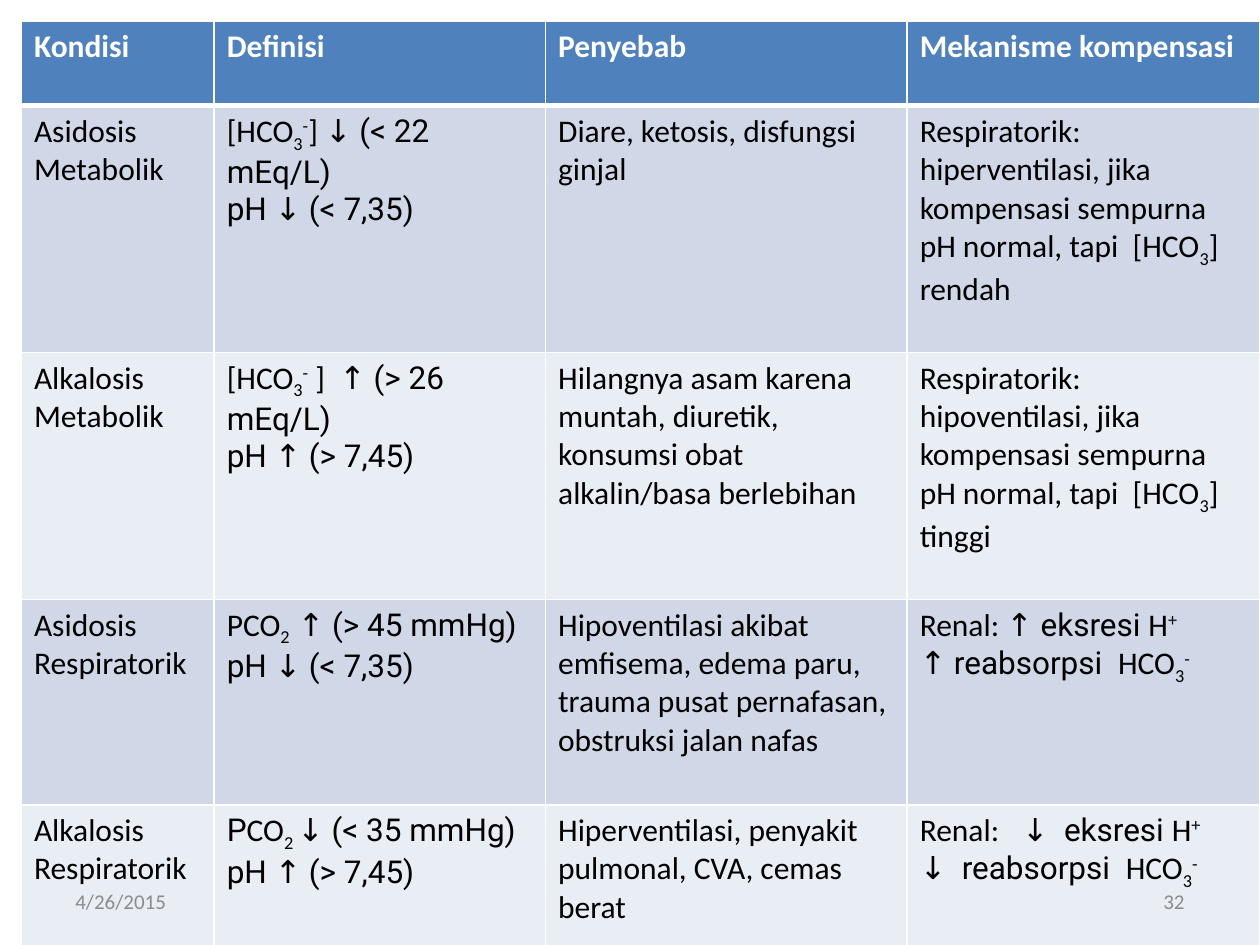
from lxml.etree import SubElement as Sub
from pptx import Presentation
from pptx.dml.color import RGBColor as RGB
from pptx.enum.text import MSO_ANCHOR as Anchor, PP_ALIGN as Align
from pptx.oxml.ns import qn
from pptx.util import Inches, Pt

# Content: a cell is a list of lines, a line a list of (style, text) runs
PLAIN, ALT, LOW, HIGH = "plain", "alt", "low", "high"
HCO3 = [(PLAIN, "HCO"), (LOW, "3"), (HIGH, "-")]


def say(text):
    return [[(PLAIN, text)]]


def lung(mode, end):
    lead = f"Respiratorik: {mode}, jika kompensasi sempurna pH normal, tapi  [HCO"
    return [[(PLAIN, lead), (LOW, "3"), (PLAIN, "]  " + end)]]


def kidney(gap, arrow, space):
    return [
        [(PLAIN, "Renal: "), (ALT, f"{gap}{arrow}{space}eksresi "), (PLAIN, "H"), (HIGH, "+")],
        [(ALT, f"{arrow}{space}reabsorpsi  "), *HCO3],
    ]


def base(close, level, ph):
    return [[(PLAIN, "["), *HCO3, (PLAIN, close), (ALT, level)], [(ALT, ph)]]


ACID, ALKALI = "pH ↓ (< 7,35)", "pH ↑ (> 7,45)"
HEAD = ["Kondisi", "Definisi", "Penyebab", "Mekanisme kompensasi"]
BODY = [
    [say("Asidosis Metabolik"),
     base("] ", "↓ (< 22 mEq/L)", ACID),
     say("Diare, ketosis, disfungsi ginjal"),
     lung("hiperventilasi", "rendah")],
    [say("Alkalosis Metabolik"),
     base(" ]  ", "↑ (> 26 mEq/L)", ALKALI),
     say("Hilangnya asam karena muntah, diuretik, konsumsi obat alkalin/basa berlebihan"),
     lung("hipoventilasi", "tinggi")],
    [say("Asidosis Respiratorik"),
     [[(PLAIN, "PCO"), (LOW, "2  "), (ALT, "↑ (> 45 mmHg)")], [(ALT, ACID)]],
     say("Hipoventilasi akibat emfisema, edema paru, trauma pusat pernafasan, "
         "obstruksi jalan nafas"),
     kidney("", "↑", " ")],
    [say("Alkalosis Respiratorik"),
     [[(ALT, "P"), (PLAIN, "CO"), (LOW, "2 "), (ALT, "↓ (< 35 mmHg)")], [(ALT, ALKALI)]],
     say("Hiperventilasi, penyakit pulmonal, CVA, cemas berat"),
     kidney("  ", "↓", "  ")],
]
FOOT = [("4/26/2015", Align.LEFT), ("32", Align.RIGHT)]

# Theme and grid
THEME = dict(font="Calibri", alt="Roboto", size=18, small=12, head="4F81BD",
             bands=("D0D8E8", "E9EDF4"), ink="000000", light="FFFFFF", mute="8C8C8C")
SHIFT = {LOW: "-25000", HIGH: "30000"}
WIDE, TALL = 10, 7.5
EDGE = 0.17
COLS = [1.53, 2.63, 2.87, 2.8]
ROWS = [0.67, 1.96, 1.96, 1.63, 1.28]


def write(frame, lines, size=THEME["size"], color=THEME["ink"], bold=False, align=Align.LEFT):
    for i, line in enumerate(lines):
        para = frame.paragraphs[0] if i == 0 else frame.add_paragraph()
        para.alignment = align
        for style, text in line:
            run = para.add_run()
            run.text = text
            font = run.font
            font.name = THEME["alt" if style == ALT else "font"]
            font.size, font.bold = Pt(size), bold
            font.color.rgb = RGB.from_string(color)
            if style in SHIFT:
                run._r.get_or_add_rPr().set("baseline", SHIFT[style])


def border(cell, **widths):
    props = cell._tc.get_or_add_tcPr()
    for side in "LRTB":
        line = Sub(props, qn(f"a:ln{side}"), w=str(Pt(widths.get(side, 1))))
        Sub(Sub(line, qn("a:solidFill")), qn("a:srgbClr"), val=THEME["light"])


def paint(cell, color):
    cell.fill.solid()
    cell.fill.fore_color.rgb = RGB.from_string(color)


deck = Presentation()
deck.slide_width, deck.slide_height = Inches(WIDE), Inches(TALL)
slide = deck.slides.add_slide(deck.slide_layouts[6])

# Table
table = slide.shapes.add_table(
    len(ROWS), len(COLS), Inches(EDGE), Inches(EDGE),
    Inches(sum(COLS)), Inches(sum(ROWS))).table
table.horz_banding = False
for col, width in zip(table.columns, COLS):
    col.width = Inches(width)
for row, height in zip(table.rows, ROWS):
    row.height = Inches(height)

for c, title in enumerate(HEAD):
    cell = table.cell(0, c)
    border(cell, B=3)
    paint(cell, THEME["head"])
    write(cell.text_frame, say(title), color=THEME["light"], bold=True)

for r, row in enumerate(BODY):
    for c, lines in enumerate(row):
        cell = table.cell(r + 1, c)
        border(cell, T=3 if r == 0 else 1)
        paint(cell, THEME["bands"][r % 2])
        write(cell.text_frame, lines)

# Date and page number
side, span = 0.05 * WIDE, 2.33
for (text, align), left in zip(FOOT, (side, WIDE - side - span)):
    box = slide.shapes.add_textbox(Inches(left), Inches(6.95), Inches(span), Inches(0.4))
    frame = box.text_frame
    frame.word_wrap, frame.vertical_anchor = True, Anchor.MIDDLE
    write(frame, say(text), size=THEME["small"], color=THEME["mute"], align=align)

deck.save("out.pptx")
